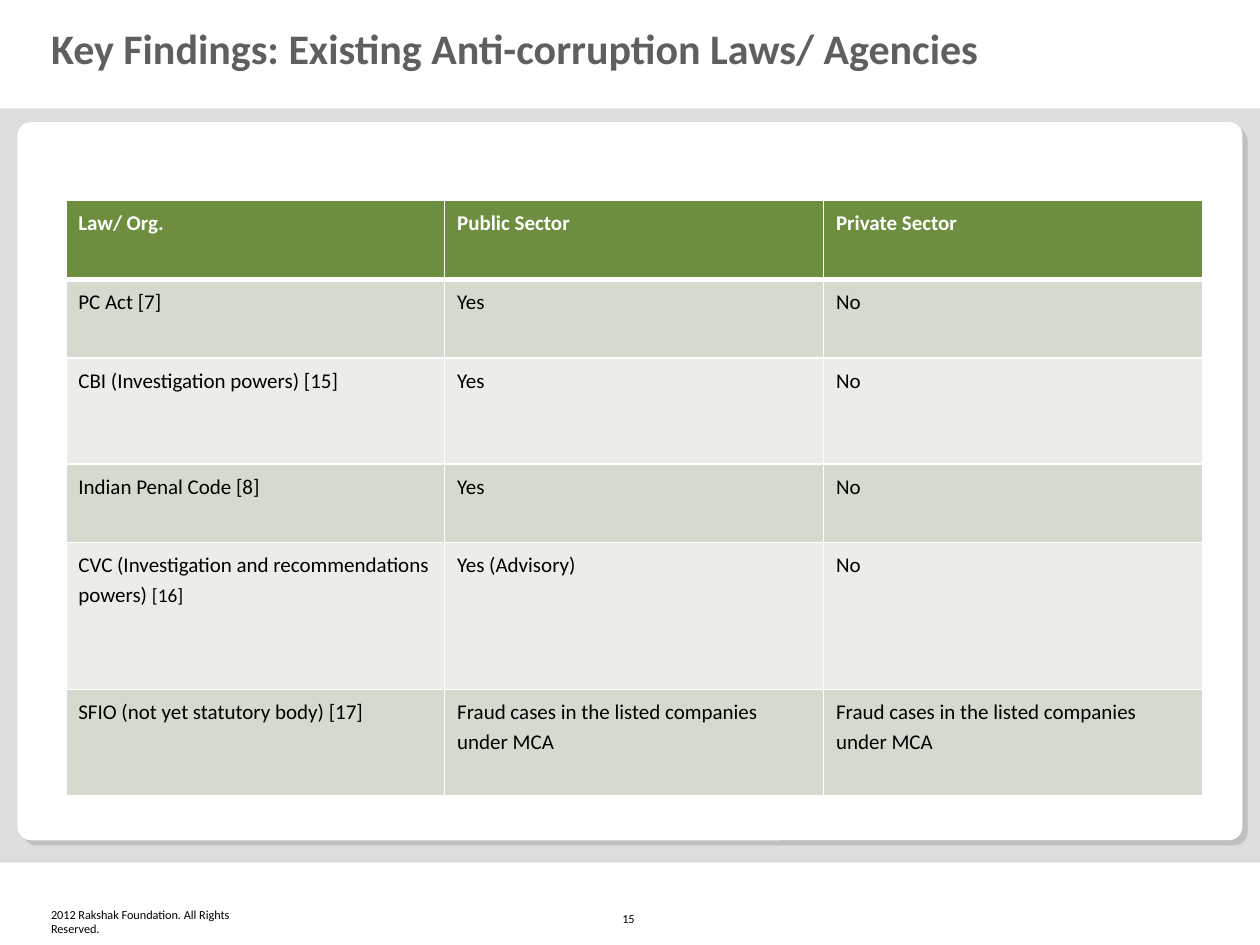
from lxml import etree
from pptx import Presentation
from pptx.dml.color import RGBColor
from pptx.enum import shapes, text
from pptx.oxml.ns import qn
from pptx.util import Pt

TITLE = "Key Findings: Existing Anti-corruption Laws/ Agencies"
FOOTER = "2012 Rakshak Foundation. All Rights Reserved."
PAGE = "15"
FRAUD = "Fraud cases in the listed companies under MCA"
ROWS = [
    ("Law/ Org.", "Public Sector", "Private Sector"),
    ("PC Act [7]", "Yes", "No"),
    ("CBI (Investigation powers) [15]", "Yes", "No"),
    ("Indian Penal Code [8]", "Yes", "No"),
    (("CVC (Investigation and recommendations powers) ", "[16]"), "Yes (Advisory)", "No"),
    ("SFIO (not yet statutory body) [17]", FRAUD, FRAUD),
]
ROW_HEIGHTS = [45, 45, 60.5, 45, 84, 60.5]
COL_WIDTH = 216.5
COLORS = {"band": "DDDDDD", "shade": "C0C0C0", "white": "FFFFFF", "title": "5F5F5F",
          "text": "000000", "header": "6C8E3E", "odd": "D4DBCE", "even": "EBEEE8"}


def rgb(name):
    return RGBColor.from_string(COLORS[name])


def add_run(p, words, size, color, bold=False):
    r = p.add_run()
    r.text = words
    for key, value in {"name": "Calibri", "size": Pt(size), "bold": bold}.items():
        setattr(r.font, key, value)
    r.font.color.rgb = rgb(color)


def add_panel(s, kind, box, color):
    sp = s.shapes.add_shape(kind, *map(Pt, box))
    sp.shadow.inherit = False
    sp.fill.solid()
    sp.fill.fore_color.rgb = rgb(color)
    sp.line.fill.background()
    if kind == shapes.MSO_SHAPE.ROUNDED_RECTANGLE:
        sp.adjustments[0] = 0.019


def add_small_text(s, words, box, margins):
    tf = s.shapes.add_textbox(*map(Pt, box)).text_frame
    tf.word_wrap = True
    tf.vertical_anchor = text.MSO_ANCHOR.BOTTOM
    for side, margin in zip(("left", "top", "right", "bottom"), margins):
        setattr(tf, f"margin_{side}", Pt(margin))
    add_run(tf.paragraphs[0], words, 7, "text")


def add_border(cell, side, width):
    ln = etree.SubElement(cell._tc.get_or_add_tcPr(), qn(f"a:ln{side}"), w=str(Pt(width)))
    fill = etree.SubElement(ln, qn("a:solidFill"))
    etree.SubElement(fill, qn("a:srgbClr"), val=COLORS["white"])


def fill_cell(cell, words, row):
    header = row == 0
    for side in "LRTB":
        under_header = (row, side) in ((0, "B"), (1, "T"))
        add_border(cell, side, 3 if under_header else 1)
    cell.fill.solid()
    cell.fill.fore_color.rgb = rgb("header" if header else "odd" if row % 2 else "even")
    p = cell.text_frame.paragraphs[0]
    formats = {"alignment": text.PP_ALIGN.LEFT, "line_spacing": 1.15, "space_after": Pt(10)}
    for key, value in formats.items():
        setattr(p, key, value)
    parts = (words,) if isinstance(words, str) else words
    for part, size in zip(parts, (12, 11)):
        add_run(p, part, size, "white" if header else "text", header)


def main():
    prs = Presentation()
    prs.slide_width, prs.slide_height = Pt(720), Pt(540)
    s = prs.slides.add_slide(prs.slide_layouts[5])

    rounded = shapes.MSO_SHAPE.ROUNDED_RECTANGLE
    add_panel(s, shapes.MSO_SHAPE.RECTANGLE, (0, 62, 720, 431), "band")
    add_panel(s, rounded, (13, 72.7, 700, 410.4), "shade")
    add_panel(s, rounded, (10, 69.8, 700, 410.4), "white")

    title = s.shapes.title
    for key, value in zip(("left", "top", "width", "height"), (22, 13.7, 572, 31.7)):
        setattr(title, key, Pt(value))
    tf = title.text_frame
    tf.auto_size = text.MSO_AUTO_SIZE.NONE
    tf.vertical_anchor = text.MSO_ANCHOR.MIDDLE
    p = tf.paragraphs[0]
    p.alignment = text.PP_ALIGN.LEFT
    p.line_spacing = 0.85
    add_run(p, TITLE, 24, "title", True)

    add_small_text(s, FOOTER, (29.2, 518, 119, 17), (0, 0, 0, 0))
    add_small_text(s, PAGE, (348.5, 508.3, 23, 24.5), (7.2, 3.6, 7.2, 3.6))

    table = s.shapes.add_table(len(ROWS), len(ROWS[0]), Pt(37.6), Pt(114.7),
                               Pt(COL_WIDTH * len(ROWS[0])), Pt(sum(ROW_HEIGHTS))).table
    for column in table.columns:
        column.width = Pt(COL_WIDTH)
    for i, (words, height) in enumerate(zip(ROWS, ROW_HEIGHTS)):
        table.rows[i].height = Pt(height)
        for j, entry in enumerate(words):
            fill_cell(table.cell(i, j), entry, i)

    prs.save("out.pptx")


if __name__ == "__main__":
    main()
